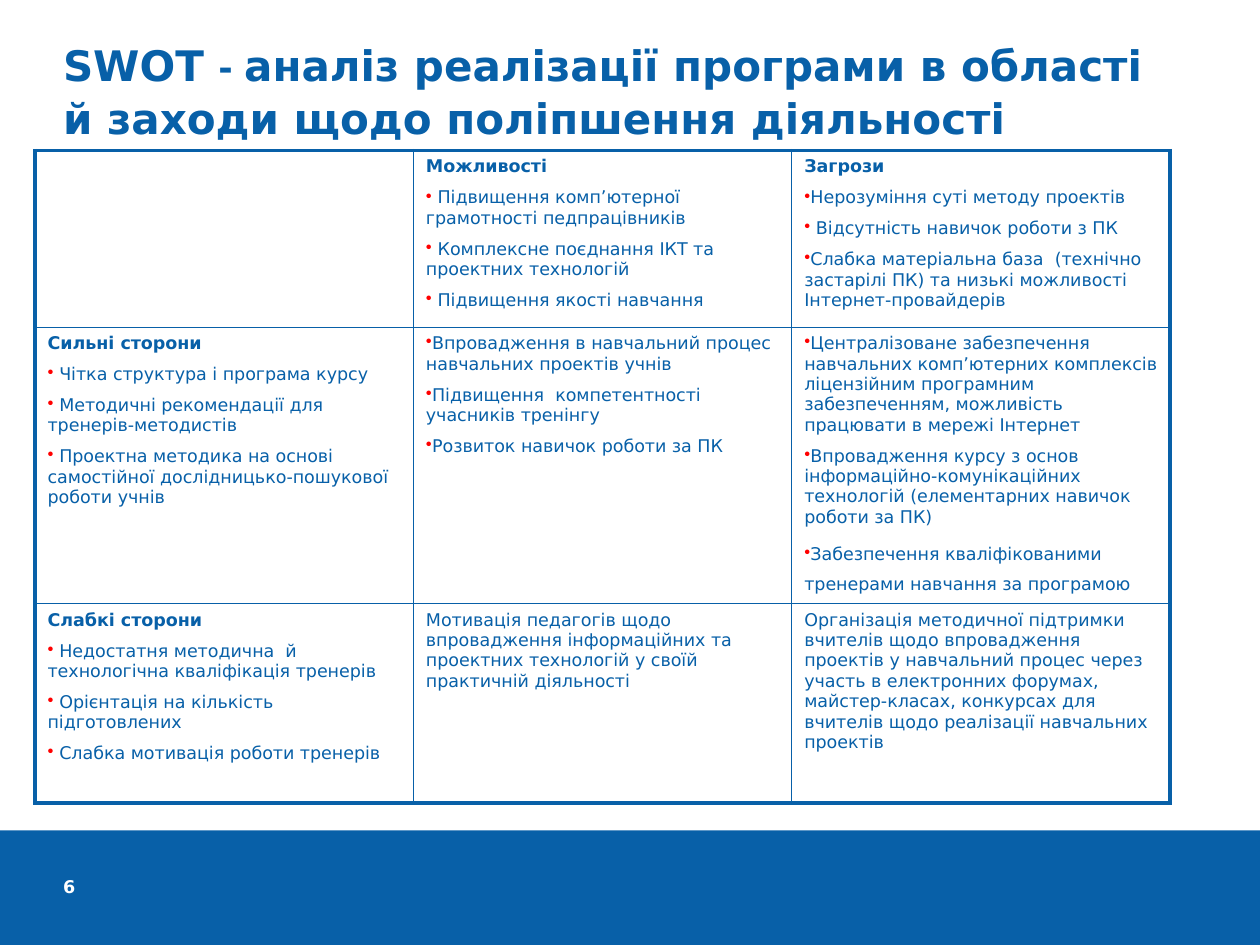
"""Builds a SWOT analysis slide with a three by three table."""
import pptx
import pptx.dml.color
import pptx.enum.shapes
import pptx.enum.text
import pptx.oxml
import pptx.oxml.ns
import pptx.util

Pt = pptx.util.Pt
HUES = {"blue": "0860A8", "red": "FF0000", "white": "FFFFFF"}
NS = pptx.oxml.ns.nsdecls("a")


def rgb(name):
    return pptx.dml.color.RGBColor.from_string(HUES[name])


def write(para, text, size=10, hue="blue", bold=False, face="DejaVu Sans"):
    run = para.add_run()
    run.text = text
    for key, value in {"size": Pt(size), "bold": bold, "name": face}.items():
        setattr(run.font, key, value)
    run.font.color.rgb = rgb(hue)


deck = pptx.Presentation()
deck.slide_width, deck.slide_height = Pt(720), Pt(540)
slide = deck.slides.add_slide(deck.slide_layouts[5])
shapes = slide.shapes

band = shapes.add_shape(pptx.enum.shapes.MSO_SHAPE.RECTANGLE, 0, Pt(474.5), Pt(720), Pt(65.5))
band.shadow.inherit = False
band.fill.solid()
band.fill.fore_color.rgb = rgb("blue")
band.line.fill.background()

frame = {"margin_left": 0, "margin_top": 0, "margin_right": 0, "margin_bottom": 0,
         "word_wrap": True, "auto_size": pptx.enum.text.MSO_AUTO_SIZE.NONE,
         "vertical_anchor": pptx.enum.text.MSO_ANCHOR.TOP}
title = shapes.title
place = {"left": Pt(36), "top": Pt(21.6), "width": Pt(648.7), "height": Pt(69.8)}
for key, value in place.items():
    setattr(title, key, value)
number = shapes.add_textbox(Pt(36), Pt(500.4), Pt(32.4), Pt(23.8))
for box in (title, number):
    for key, value in frame.items():
        setattr(box.text_frame, key, value)
write(number.text_frame.paragraphs[0], "6", hue="white", bold=True)

head = title.text_frame.paragraphs[0]
head.alignment = pptx.enum.text.PP_ALIGN.LEFT
head.line_spacing = 1.04
write(head, "SWOT ", 24, bold=True)
write(head, "- ", 24, bold=True, face="Arial")
write(head, "аналіз реалізації програми в області ", 24, bold=True)
head.add_line_break()
write(head, "й заходи щодо поліпшення діяльності", 24, bold=True)

cells = [
    [("", "", []),
     ("Можливості", "", [
         " Підвищення комп’ютерної грамотності педпрацівників",
         " Комплексне поєднання ІКТ та проектних технологій",
         " Підвищення якості навчання"]),
     ("Загрози", "", [
         "Нерозуміння суті методу проектів",
         " Відсутність навичок роботи з ПК",
         "Слабка матеріальна база  (технічно застарілі ПК) та низькі можливості "
         "Інтернет-провайдерів"])],
    [("Сильні сторони", "", [
        " Чітка структура і програма курсу",
        " Методичні рекомендації для тренерів-методистів",
        " Проектна методика на основі самостійної дослідницько-пошукової роботи учнів"]),
     ("", "", [
         "Впровадження в навчальний процес навчальних проектів учнів",
         "Підвищення  компетентності учасників тренінгу",
         "Розвиток навичок роботи за ПК"]),
     ("", "", [
         "Централізоване забезпечення навчальних комп’ютерних комплексів ліцензійним "
         "програмним забезпеченням, можливість працювати в мережі Інтернет",
         "Впровадження курсу з основ інформаційно-комунікаційних технологій "
         "(елементарних навичок роботи за ПК)",
         "Забезпечення кваліфікованими тренерами навчання за програмою"])],
    [("Слабкі сторони", "", [
        " Недостатня методична  й технологічна кваліфікація тренерів",
        " Орієнтація на кількість підготовлених",
        " Слабка мотивація роботи тренерів"]),
     ("", "Мотивація педагогів щодо впровадження інформаційних та проектних технологій "
          "у своїй практичній діяльності", []),
     ("", "Організація методичної підтримки вчителів щодо впровадження проектів у "
          "навчальний процес через участь в електронних форумах, майстер-класах, "
          "конкурсах для вчителів щодо реалізації навчальних проектів", [])],
]
high = [101, 158, 114]
grid = shapes.add_table(3, 3, Pt(20), Pt(86), Pt(648.6), Pt(sum(high))).table
grid.first_row = grid.horz_banding = False
for col in grid.columns:
    col.width = Pt(216.2)
for r, row in enumerate(cells):
    grid.rows[r].height = Pt(high[r])
    for c, (name, plain, items) in enumerate(row):
        cell = grid.cell(r, c)
        props = cell._tc.get_or_add_tcPr()
        for side, edge in {"L": c == 0, "R": c == 2, "T": r == 0, "B": r == 2}.items():
            wide = Pt(2.25 if edge else 1)
            props.append(pptx.oxml.parse_xml(
                f'<a:ln{side} {NS} w="{wide}"><a:solidFill><a:srgbClr val="{HUES["blue"]}"/>'
                f'</a:solidFill></a:ln{side}>'))
        cell.fill.background()
        body = cell.text_frame
        para = body.paragraphs[0]
        lead = name or plain
        if lead:
            write(para, lead, bold=bool(name))
        for i, item in enumerate(items):
            if lead or i:
                para = body.add_paragraph()
                para.space_before = Pt(6)
            marks = para._p.get_or_add_pPr()
            marks.append(pptx.oxml.parse_xml(
                f'<a:buClr {NS}><a:srgbClr val="{HUES["red"]}"/></a:buClr>'))
            marks.append(pptx.oxml.parse_xml(f'<a:buChar {NS} char="•"/>'))
            write(para, item)

last = grid.cell(1, 2).text_frame.paragraphs[-1]
last.space_before = Pt(9.6)
write(last, " ", 16)

deck.save("out.pptx")
